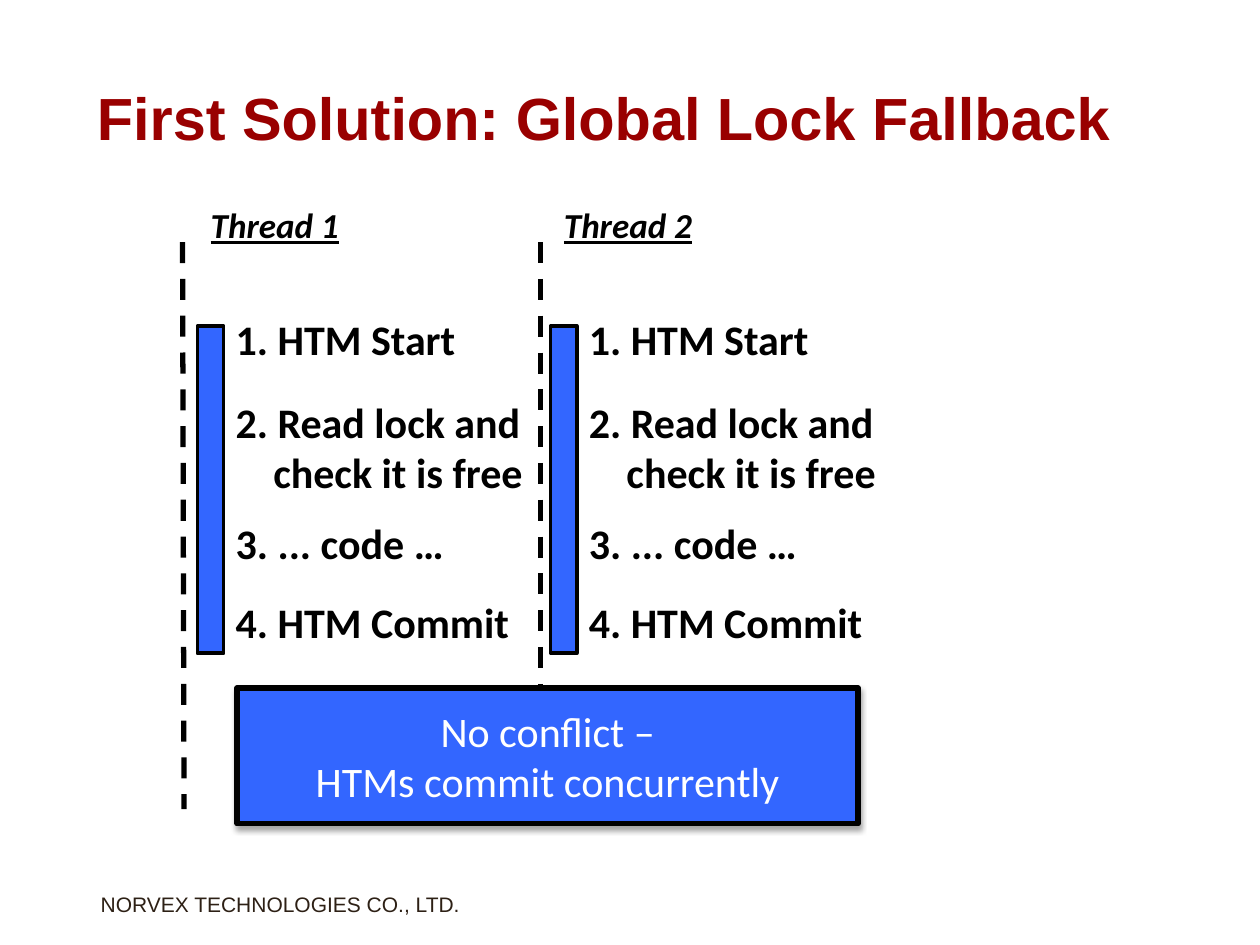
from lxml import etree
from pptx import Presentation
from pptx.dml.color import RGBColor
from pptx.enum.dml import MSO_LINE
from pptx.enum.shapes import MSO_CONNECTOR, MSO_SHAPE
from pptx.enum.text import MSO_ANCHOR, MSO_AUTO_SIZE, PP_ALIGN
from pptx.oxml import parse_xml
from pptx.oxml.ns import qn
from pptx.util import Cm, Pt

BLACK = RGBColor(0x00, 0x00, 0x00)
WHITE = RGBColor(0xFF, 0xFF, 0xFF)
BLUE = RGBColor(0x33, 0x66, 0xFF)
DARK_RED = RGBColor(0x99, 0x00, 0x00)
BROWN = RGBColor(0x2D, 0x20, 0x15)

DASH = MSO_LINE.DASH
STRAIGHT = MSO_CONNECTOR.STRAIGHT
RECTANGLE = MSO_SHAPE.RECTANGLE
MIDDLE, TOP = MSO_ANCHOR.MIDDLE, MSO_ANCHOR.TOP
NO_AUTOFIT = MSO_AUTO_SIZE.NONE
LEFT, CENTER = PP_ALIGN.LEFT, PP_ALIGN.CENTER

TITLE_FONT = {"name": "Arial", "size": Pt(34), "bold": True}
FOOTER_FONT = {"name": "Arial", "size": Pt(12)}
THREAD_FONT = {"name": "Calibri", "size": Pt(20), "bold": True,
               "italic": True, "underline": True}
STEP_FONT = {"name": "Calibri", "size": Pt(24), "bold": True}
BANNER_FONT = {"name": "Calibri", "size": Pt(24)}

THREAD_PITCH = 7.12
STEPS = [
    (6.2, 1.27, ["1. HTM Start"]),
    (7.87, 2.31, ["2. Read lock and", "check it is free"]),
    (10.31, 1.27, ["3. ... code …"]),
    (11.91, 1.27, ["4. HTM Commit"]),
]
SHADOW = (
    '<a:effectLst xmlns:a="http://schemas.openxmlformats.org/drawingml/2006/main">'
    '<a:outerShdw blurRad="39370" dist="22860" dir="5400000" rotWithShape="0">'
    '<a:srgbClr val="000000"><a:alpha val="35000"/></a:srgbClr>'
    '</a:outerShdw></a:effectLst>'
)


def write_text(shape, lines, font_values, color, alignment=LEFT, anchor=TOP, wrap=True):
    frame = shape.text_frame
    frame.text = "\n".join(lines)
    frame.auto_size = NO_AUTOFIT
    frame.word_wrap = wrap
    frame.vertical_anchor = anchor
    for paragraph in frame.paragraphs:
        paragraph.alignment = alignment
        for name, value in font_values.items():
            setattr(paragraph.font, name, value)
        paragraph.font.color.rgb = color


def format_title(slide, text):
    title = slide.shapes.title
    position = {"left": Cm(1.7), "top": Cm(0.76), "width": Cm(21.59), "height": Cm(3.18)}
    for name, value in position.items():
        setattr(title, name, value)
    write_text(title, [text], TITLE_FONT, DARK_RED, anchor=MIDDLE)


def add_text(slide, left, top, width, height, lines, font_values, color, **layout):
    box = slide.shapes.add_textbox(Cm(left), Cm(top), Cm(width), Cm(height))
    write_text(box, lines, font_values, color, **layout)
    return box


def add_rectangle(slide, left, top, width, height, line_width):
    shape = slide.shapes.add_shape(RECTANGLE, Cm(left), Cm(top), Cm(width), Cm(height))
    shape.shadow.inherit = False
    shape.fill.solid()
    shape.fill.fore_color.rgb = BLUE
    shape.line.color.rgb = BLACK
    shape.line.width = Pt(line_width)
    return shape


def add_timeline(slide, start_x, end_x):
    connector = slide.shapes.add_connector(
        STRAIGHT, Cm(start_x), Cm(4.88), Cm(end_x), Cm(16.31))
    connector.line.color.rgb = BLACK
    connector.line.width = Pt(3)
    connector.line.dash_style = DASH
    etree.SubElement(connector._element.spPr, qn("a:effectLst"))


def add_thread(slide, name, offset):
    add_text(slide, 3.18 + offset, 3.81, 4.72, 1.45, [name], THREAD_FONT, BLACK,
             alignment=CENTER, anchor=MIDDLE)
    add_rectangle(slide, 3.98 + offset, 6.57, 0.53, 6.6, 2)
    for top, height, lines in STEPS:
        box = add_text(slide, 4.5 + offset, top, 6.35, height, lines, STEP_FONT, BLACK,
                       wrap=False)
        for paragraph in box.text_frame.paragraphs[1:]:
            paragraph._p.get_or_add_pPr().set("marL", str(Cm(0.76)))


def add_banner(slide, lines):
    banner = add_rectangle(slide, 4.78, 13.87, 12.52, 2.74, 3)
    properties = banner._element.spPr
    properties.replace(properties.find(qn("a:effectLst")), parse_xml(SHADOW))
    write_text(banner, lines, BANNER_FONT, WHITE, alignment=CENTER, anchor=MIDDLE)


def add_footer(slide, text):
    footer = add_text(slide, 1.8, 17.86, 7.65, 0.74, [text], FOOTER_FONT, BROWN, wrap=False)
    frame = footer.text_frame
    frame.margin_left = frame.margin_right = Cm(0.23)
    frame.margin_top = frame.margin_bottom = Cm(0.11)


def main():
    presentation = Presentation()
    presentation.slide_width = Cm(25.4)
    presentation.slide_height = Cm(19.05)
    slide = presentation.slides.add_slide(presentation.slide_layouts[5])
    add_footer(slide, "NORVEX TECHNOLOGIES CO., LTD.")
    format_title(slide, "First Solution: Global Lock Fallback")
    add_timeline(slide, 3.68, 3.71)
    add_timeline(slide, 10.9, 10.9)
    for index, name in enumerate(["Thread 1", "Thread 2"]):
        add_thread(slide, name, index * THREAD_PITCH)
    add_banner(slide, ["No conflict –", "HTMs commit concurrently"])
    presentation.save("out.pptx")


if __name__ == "__main__":
    main()
